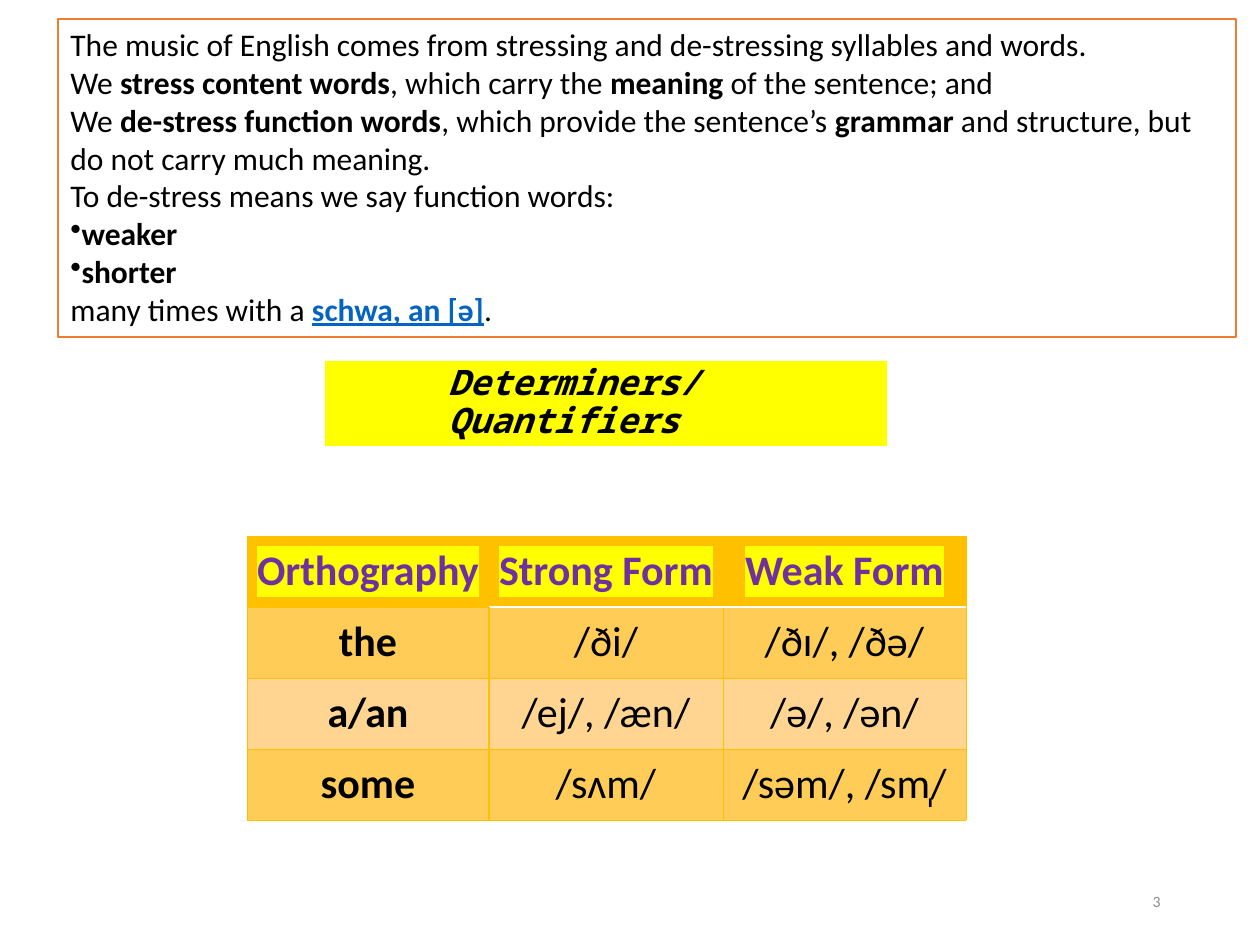
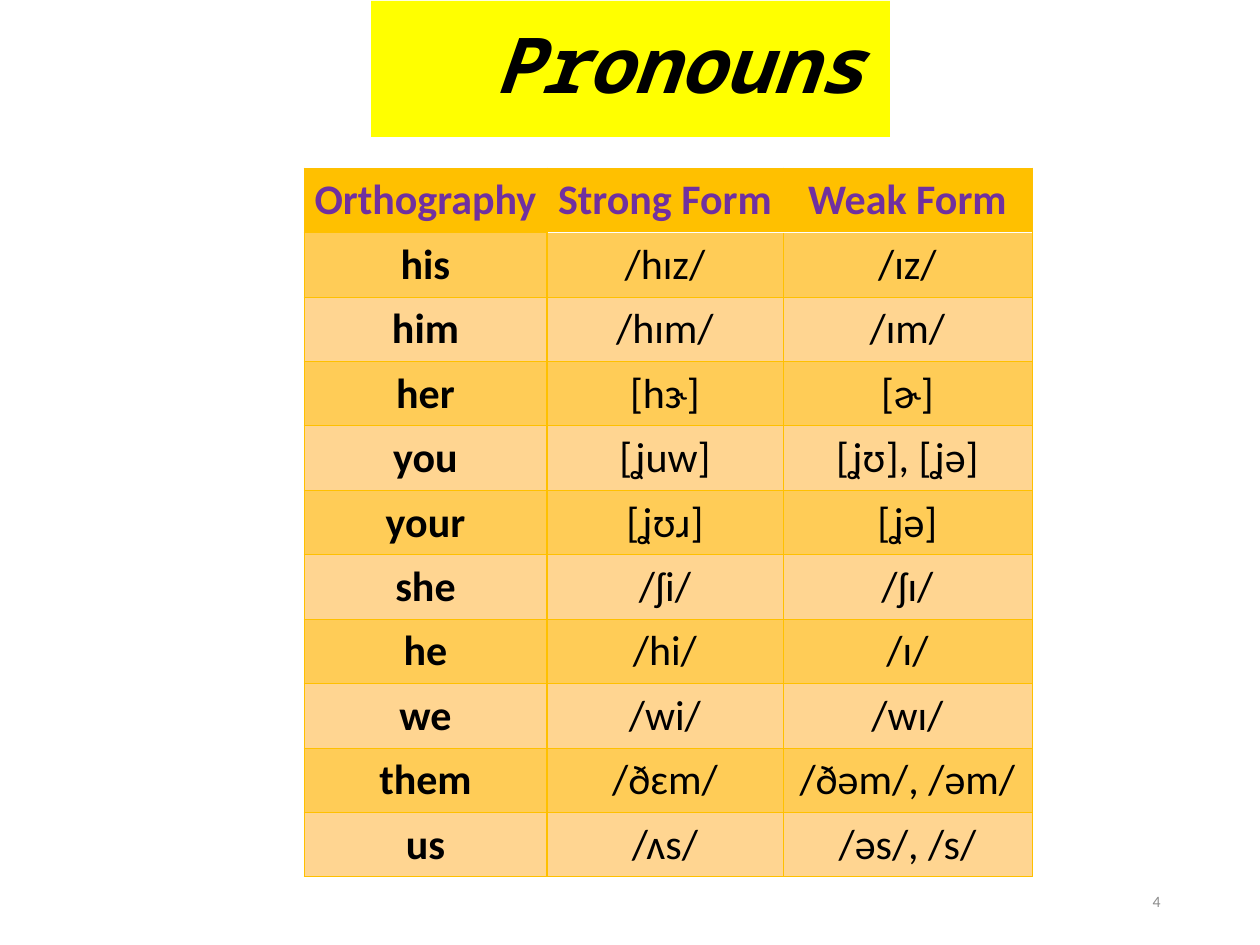
from pptx import Presentation, util as u
from pptx.dml.color import RGBColor
from pptx.enum import shapes, text
from pptx.oxml import ns, xmlchemy

PX = 914400 / 126
TITLE_ONLY = 5
BODY_FONT, TITLE_FONT = "Calibri", "Noto Sans Mono"
COLORS = {
    "text": "000000",
    "paper": "FFFFFF",
    "highlight": "FFFF00",
    "frame": "ED7D31",
    "link": "0563C1",
    "head_text": "7030A0",
    "gold": "FFC000",
    "band_dark": "FFCC57",
    "band_light": "FFD591",
    "number": "8C8C8C",
}
HEADINGS = ("Orthography", "Strong Form", "Weak Form")
CELL_INSET = 7

# Each paragraph: (bulleted, [(words, style), ...])
STRESS_RULES = [
    (False, [("The music of English comes from stressing and de-stressing "
              "syllables and words.", "plain")]),
    (False, [("We", "plain"), (" stress content words", "bold"),
             (", which carry the ", "plain"), ("meaning", "bold"),
             (" of the sentence; and", "plain")]),
    (False, [("We ", "plain"), ("de-stress function words", "bold"),
             (", which provide the sentence’s ", "plain"), ("grammar", "bold"),
             (" and structure, but do not carry much meaning.", "plain")]),
    (False, [("To de-stress means we say function words:", "plain")]),
    (True, [("weaker", "bold")]),
    (True, [("shorter", "bold")]),
    (False, [("many times with a ", "plain"), ("schwa, an [ə]", "link"),
             (".", "plain")]),
]
DETERMINERS = [
    ("the", "/ði/", "/ðɪ/, /ðə/"),
    ("a/an", "/ej/, /æn/", "/ə/, /ən/"),
    ("some", "/sʌm/", "/səm/, /sm̩/"),
]
PRONOUNS = [
    ("his", "/hɪz/", "/ɪz/"),
    ("him", "/hɪm/", "/ɪm/"),
    ("her", "[hɝ]", "[ɚ]"),
    ("you", "[ʝuw]", "[ʝʊ], [ʝə]"),
    ("your", "[ʝʊɹ]", "[ʝə]"),
    ("she", "/ʃi/", "/ʃɪ/"),
    ("he", "/hi/", "/ɪ/"),
    ("we", "/wi/", "/wɪ/"),
    ("them", "/ðɛm/", "/ðəm/, /əm/"),
    ("us", "/ʌs/", "/əs/, /s/"),
]


def px(length):
    return u.Emu(round(length * PX))


def rgb(name):
    return RGBColor.from_string(COLORS[name])


def add_child(parent, tag, **attributes):
    child = xmlchemy.OxmlElement(tag)
    for key, value in attributes.items():
        child.set(key, str(value))
    parent.append(child)
    return child


def add_run(paragraph, words, size, color="text", font=BODY_FONT, bold=False,
            italic=False, underline=False):
    run = paragraph.add_run()
    run.text = words
    style = run.font
    style.size, style.name = u.Pt(size), font
    style.bold, style.italic, style.underline = bold, italic, underline
    style.color.rgb = rgb(color)
    return run


def highlight(run):
    properties = run._r.get_or_add_rPr()
    mark = xmlchemy.OxmlElement("a:highlight")
    add_child(mark, "a:srgbClr", val=COLORS["highlight"])
    properties.find(ns.qn("a:solidFill")).addnext(mark)


def set_title(slide, words, box, size):
    title = slide.shapes.title
    title.left, title.top, title.width, title.height = map(px, box)
    title.fill.solid()
    title.fill.fore_color.rgb = rgb("highlight")
    frame = title.text_frame
    frame.word_wrap = True
    frame.auto_size = text.MSO_AUTO_SIZE.NONE
    frame.vertical_anchor = text.MSO_ANCHOR.MIDDLE
    frame.margin_left, frame.margin_right = px(123), px(13)
    frame.margin_top = frame.margin_bottom = 0
    paragraph = frame.paragraphs[0]
    paragraph.alignment = text.PP_ALIGN.LEFT
    paragraph.line_spacing = 0.9
    add_run(paragraph, words, size, font=TITLE_FONT, bold=True, italic=True)


def add_slide_number(slide, number):
    frame = slide.shapes.add_textbox(*map(px, (890, 876, 283, 50))).text_frame
    frame.word_wrap = True
    frame.vertical_anchor = text.MSO_ANCHOR.MIDDLE
    paragraph = frame.paragraphs[0]
    paragraph.alignment = text.PP_ALIGN.RIGHT
    add_run(paragraph, str(number), 9, "number")


def add_rules_box(slide, rules, box):
    panel = slide.shapes.add_shape(shapes.MSO_SHAPE.RECTANGLE, *map(px, box))
    panel.shadow.inherit = False
    panel.fill.solid()
    panel.fill.fore_color.rgb = rgb("paper")
    panel.line.color.rgb = rgb("frame")
    panel.line.width = u.Pt(1)
    frame = panel.text_frame
    frame.word_wrap = True
    frame.vertical_anchor = text.MSO_ANCHOR.TOP
    for index, (bulleted, pieces) in enumerate(rules):
        paragraph = frame.add_paragraph() if index else frame.paragraphs[0]
        paragraph.alignment = text.PP_ALIGN.LEFT
        if bulleted:
            add_child(paragraph._p.get_or_add_pPr(), "a:buChar", char="•")
        for words, style in pieces:
            is_link = style == "link"
            add_run(paragraph, words, 18, "link" if is_link else "text",
                    bold=style != "plain", underline=is_link)


def set_borders(cell, row, column):
    """Gold grid, white rule below the headings, heavier first-column edge."""
    edges = {side: ("gold", 0.5) for side in ("L", "R", "T", "B")}
    if row and column < 2:
        edges["L" if column else "R"] = ("gold", 1)
    if column and row < 2:
        edges["T" if row else "B"] = ("paper", 1)
    properties = cell._tc.get_or_add_tcPr()
    for side, (color, width) in edges.items():
        line = add_child(properties, f"a:ln{side}", w=u.Pt(width))
        add_child(add_child(line, "a:solidFill"), "a:srgbClr", val=COLORS[color])


def fill_cell(cell, words, row, column, marked):
    set_borders(cell, row, column)
    cell.fill.solid()
    band = "band_dark" if row % 2 else "band_light"
    cell.fill.fore_color.rgb = rgb(band if row else "gold")
    cell.margin_left = cell.margin_right = px(CELL_INSET)
    cell.margin_top = cell.margin_bottom = px(CELL_INSET)
    cell.vertical_anchor = text.MSO_ANCHOR.MIDDLE
    paragraph = cell.text_frame.paragraphs[0]
    paragraph.alignment = text.PP_ALIGN.CENTER
    run = add_run(paragraph, words, 24, "text" if row else "head_text",
                  bold=row == 0 or column == 0)
    if marked and row == 0:
        highlight(run)


def add_forms_table(slide, forms, corner, widths, row_height, marked=False):
    rows = [HEADINGS, *forms]
    size = (sum(widths), row_height * len(rows))
    table = slide.shapes.add_table(len(rows), len(widths),
                                   *map(px, corner + size)).table
    table.first_row = table.horz_banding = False
    for column, width in zip(table.columns, widths):
        column.width = px(width)
    for r, entries in enumerate(rows):
        table.rows[r].height = px(row_height)
        for c, words in enumerate(entries):
            fill_cell(table.cell(r, c), words, r, c, marked)


def add_slide(deck, number, title, title_box, title_size):
    slide = deck.slides.add_slide(deck.slide_layouts[TITLE_ONLY])
    set_title(slide, title, title_box, title_size)
    add_slide_number(slide, number)
    return slide


def main():
    deck = Presentation()
    deck.slide_width, deck.slide_height = px(1260), px(945)

    determiners = add_slide(deck, 3, "Determiners/Quantifiers",
                            (325, 361, 562, 85), 20)
    add_rules_box(determiners, STRESS_RULES, (58, 19, 1178, 318))
    add_forms_table(determiners, DETERMINERS, (247, 536), (242, 234, 243), 71,
                    marked=True)

    pronouns = add_slide(deck, 4, "Pronouns", (371, 1, 519, 136), 44)
    add_forms_table(pronouns, PRONOUNS, (304, 168), (243, 236, 249), 64)

    deck.save("out.pptx")


if __name__ == "__main__":
    main()
